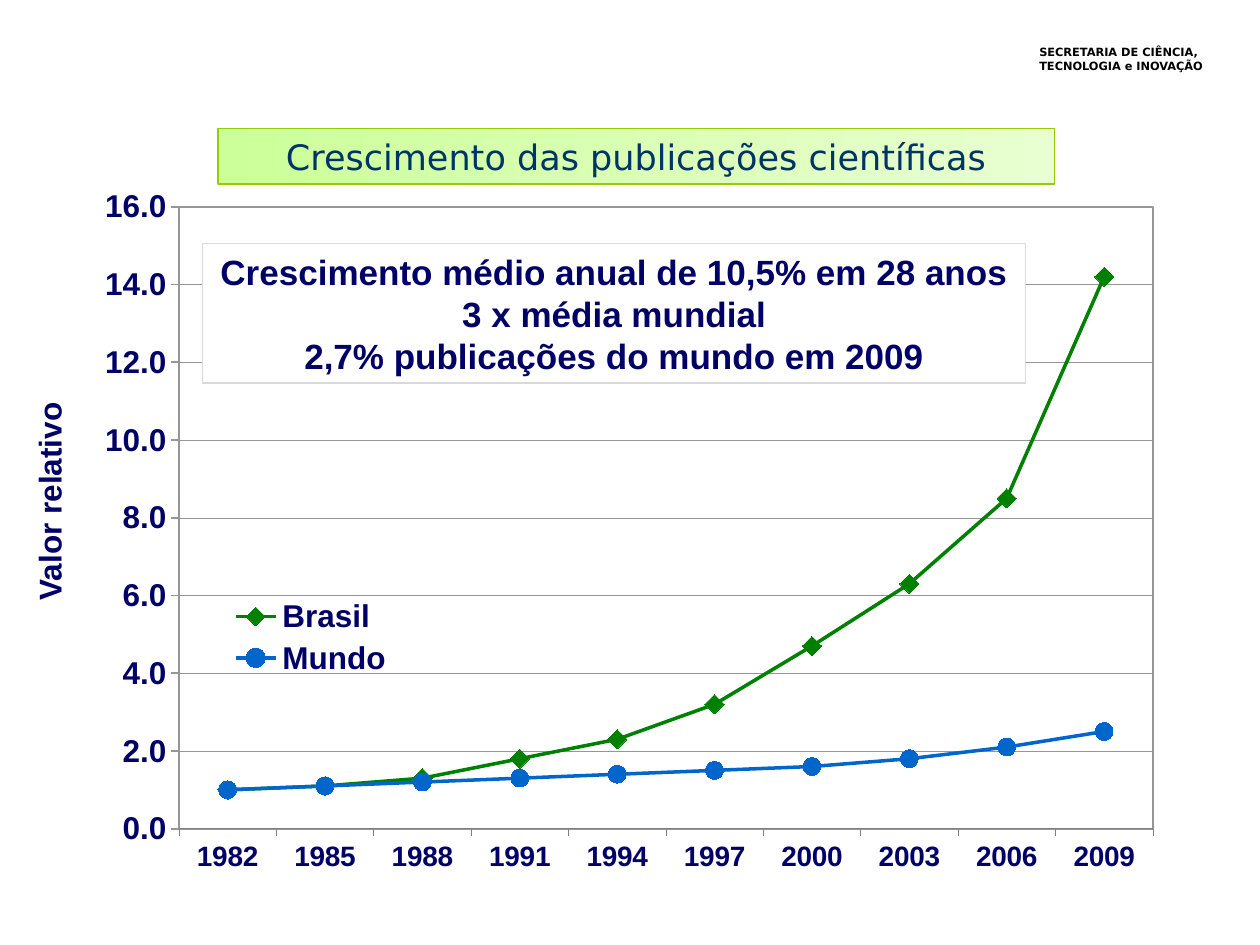
from lxml import etree
from pptx import Presentation
from pptx.chart.data import CategoryChartData
from pptx.dml.color import RGBColor
from pptx.enum.chart import XL_CHART_TYPE, XL_LEGEND_POSITION, XL_MARKER_STYLE, XL_TICK_MARK
from pptx.enum.shapes import MSO_SHAPE
from pptx.enum.text import MSO_ANCHOR, PP_ALIGN
from pptx.oxml import parse_xml
from pptx.oxml.ns import nsdecls, qn
from pptx.util import Inches, Pt

LINE_MARKERS = XL_CHART_TYPE.LINE_MARKERS
LEGEND_LEFT = XL_LEGEND_POSITION.LEFT
DIAMOND, CIRCLE = XL_MARKER_STYLE.DIAMOND, XL_MARKER_STYLE.CIRCLE
TICK_OUT = XL_TICK_MARK.OUTSIDE
RECT = MSO_SHAPE.RECTANGLE
MIDDLE = MSO_ANCHOR.MIDDLE
LEFT, CENTER = PP_ALIGN.LEFT, PP_ALIGN.CENTER

COLORS = {
    "navy": "000066", "title": "003366", "black": "000000", "white": "FFFFFF",
    "lime": "CCFF99", "pale lime": "E8FFD1", "lime edge": "99CC00",
    "box edge": "D9D9D9", "grid": "969696", "axis": "808080",
    "brasil": "008000", "mundo": "0066CC",
}
YEARS = [str(year) for year in range(1982, 2010, 3)]
SERIES = [
    ("Brasil", [1, 1.1, 1.3, 1.8, 2.3, 3.2, 4.7, 6.3, 8.5, 14.2], "brasil", DIAMOND, 11),
    ("Mundo", [1, 1.1, 1.2, 1.3, 1.4, 1.5, 1.6, 1.8, 2.1, 2.5], "mundo", CIRCLE, 10),
]


def rgb(name):
    return RGBColor.from_string(COLORS[name])


def place(sp, left, top, width, height):
    sp.left, sp.top = Inches(left), Inches(top)
    sp.width, sp.height = Inches(width), Inches(height)


def set_line(line, color, width):
    line.color.rgb = rgb(color)
    line.width = Pt(width)


def set_font(font, size, color="navy", name="Arial", bold=True):
    font.size, font.name, font.bold = Pt(size), name, bold
    font.color.rgb = rgb(color)


def set_text(sp, lines, align=CENTER, **font):
    tf = sp.text_frame
    tf.word_wrap = True
    tf.vertical_anchor = MIDDLE
    tf.text = "\n".join(lines)
    for p in tf.paragraphs:
        p.alignment = align
        for r in p.runs:
            set_font(r.font, **font)
    return tf


def add_header(slide):
    sp = slide.shapes.add_textbox(*map(Inches, (8.15, 0.34, 1.59, 0.29)))
    tf = set_text(sp, ["SECRETARIA DE CIÊNCIA,", "TECNOLOGIA e INOVAÇÃO"], LEFT,
                  size=6.5, color="black", name="DejaVu Sans")
    for p in tf.paragraphs:
        p.line_spacing = 0.6
    tf.paragraphs[1].space_before = Pt(3.25)


def format_title(slide):
    sp = slide.shapes.title
    place(sp, 1.73, 1.02, 6.64, 0.44)
    set_text(sp, ["Crescimento das publicações científicas"],
             size=20, color="title", name="DejaVu Sans", bold=False)
    sp.fill.gradient()
    sp.fill.gradient_angle = 0
    for stop, color in zip(sp.fill.gradient_stops, ("lime", "pale lime")):
        stop.color.rgb = rgb(color)
    set_line(sp.line, "lime edge", 0.75)


def set_layout(parent, index, shares, inner=False):
    """Fix the place of a chart part, as shares of the chart's size."""
    for old in parent.findall(qn("c:layout")):
        parent.remove(old)
    layout = etree.Element(qn("c:layout"))
    manual = etree.SubElement(layout, qn("c:manualLayout"))
    settings = [("layoutTarget", "inner")] if inner else []
    settings += [("xMode", "edge"), ("yMode", "edge"), *zip("xywh", shares)]
    for tag, value in settings:
        etree.SubElement(manual, qn(f"c:{tag}")).set("val", str(value))
    parent.insert(index, layout)


def format_axis(axis, size, number_format, color, width):
    axis.major_tick_mark = TICK_OUT
    axis.tick_labels.number_format = number_format
    axis.tick_labels.number_format_is_linked = False
    set_font(axis.tick_labels.font, size)
    set_line(axis.format.line, color, width)


def add_growth_chart(slide):
    data = CategoryChartData(number_format="0.0")
    data.categories = YEARS
    for name, values, *_ in SERIES:
        data.add_series(name, values)
    frame = slide.shapes.add_chart(
        LINE_MARKERS, *map(Inches, (0.23, 1.36, 9.52, 5.87)), data)
    chart = frame.chart
    chart.has_title = False
    set_font(chart.font, 14)

    format_axis(chart.category_axis, 16, "0", "axis", 0.25)
    axis = chart.value_axis
    format_axis(axis, 18, "#,##0.0", "grid", 1)
    axis.minimum_scale, axis.maximum_scale, axis.major_unit = 0, 16, 2
    set_line(axis.major_gridlines.format.line, "grid", 0.25)

    plot = chart.plots[0]
    plot.vary_by_categories = False
    for series, (_, _, color, marker, size) in zip(plot.series, SERIES):
        series.smooth = False
        set_line(series.format.line, color, 2)
        series.marker.style, series.marker.size = marker, size
        series.marker.format.fill.solid()
        series.marker.format.fill.fore_color.rgb = rgb(color)
        set_line(series.marker.format.line, color, 0.75)

    chart.has_legend = True
    legend = chart.legend
    legend.position = LEGEND_LEFT
    legend.include_in_layout = False
    set_font(legend.font, 18)
    set_layout(legend._element, 1, (0.16, 0.57, 0.15, 0.12))

    area = chart.plots[0]._element.getparent()
    set_layout(area, 0, (0.125, 0.048, 0.812, 0.841), inner=True)
    area.append(parse_xml(
        f'<c:spPr {nsdecls("c", "a")}><a:noFill/><a:ln w="{Pt(1)}"><a:solidFill>'
        f'<a:srgbClr val="{COLORS["grid"]}"/></a:solidFill></a:ln></c:spPr>'))
    chart._chartSpace.chart.addnext(parse_xml(
        f'<c:spPr {nsdecls("c", "a")}><a:noFill/><a:ln><a:noFill/></a:ln></c:spPr>'))


def add_summary(slide):
    sp = slide.shapes.add_shape(RECT, *map(Inches, (1.61, 1.93, 6.53, 1.11)))
    sp.shadow.inherit = False
    sp.fill.solid()
    sp.fill.fore_color.rgb = rgb("white")
    set_line(sp.line, "box edge", 0.75)
    set_text(sp, ["Crescimento médio anual de 10,5% em 28 anos",
                  "3 x média mundial",
                  "2,7% publicações do mundo em 2009"], size=20)


def add_axis_label(slide):
    sp = slide.shapes.add_textbox(*map(Inches, (-1.54, 3.78, 3.86, 0.4)))
    sp.rotation = 270
    set_text(sp, ["Valor relativo"], size=18)


def main():
    prs = Presentation()
    prs.slide_width, prs.slide_height = Inches(10), Inches(7.5)
    slide = prs.slides.add_slide(prs.slide_layouts[5])
    add_header(slide)
    format_title(slide)
    add_growth_chart(slide)
    add_summary(slide)
    add_axis_label(slide)
    prs.save("out.pptx")


if __name__ == "__main__":
    main()
